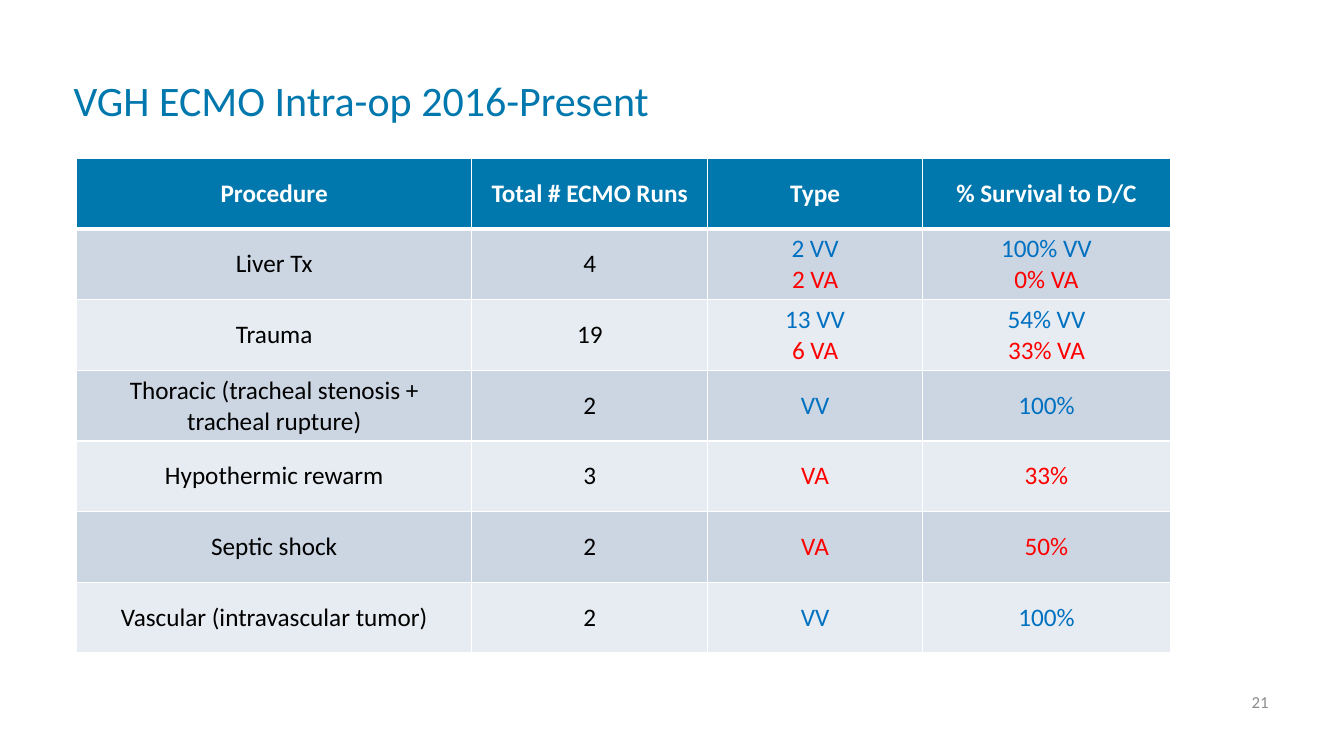
import lxml.etree
import pptx
import pptx.dml.color
import pptx.enum.text
import pptx.oxml.ns
import pptx.util

Inches = pptx.util.Inches
PP_ALIGN = pptx.enum.text.PP_ALIGN
MIDDLE = pptx.enum.text.MSO_ANCHOR.MIDDLE
WHITE = "FFFFFF"
BLACK = "000000"
TEAL = "0078AE"
BANDS = ["CCD6E3", "E7ECF2"]
MODE_COLORS = {"VV": "0070C0", "VA": "FF0000"}


def color(hex_code):
    return pptx.dml.color.RGBColor.from_string(hex_code)


def write(paragraph, text, size, hex_code, align, bold=False):
    paragraph.alignment = align
    run = paragraph.add_run()
    run.text = text
    run.font.name = "Calibri"
    run.font.size = pptx.util.Pt(size)
    run.font.bold = bold
    run.font.color.rgb = color(hex_code)


presentation = pptx.Presentation()
presentation.slide_width = Inches(13.33)
presentation.slide_height = Inches(7.5)
slide = presentation.slides.add_slide(presentation.slide_layouts[5])

heading = slide.shapes.title
heading.left, heading.top = Inches(0.63), Inches(0.73)
heading.width, heading.height = Inches(8.31), Inches(0.59)
heading.text_frame.vertical_anchor = MIDDLE
heading_line = heading.text_frame.paragraphs[0]
heading_line.line_spacing = 0.9
write(heading_line, "VGH ECMO Intra-op 2016-Present", 30, TEAL, PP_ALIGN.LEFT)

page_number = slide.shapes.add_textbox(Inches(9.68), Inches(6.76), Inches(3), Inches(0.4))
page_number.text_frame.word_wrap = True
page_number.text_frame.vertical_anchor = MIDDLE
write(page_number.text_frame.paragraphs[0], "21", 12, "8C8C8C", PP_ALIGN.RIGHT)

headers = ["Procedure", "Total # ECMO Runs", "Type", "% Survival to D/C"]
procedures = [
    ("Liver Tx", "4", [("VV", "2 VV", "100% VV"), ("VA", "2 VA", "0% VA")]),
    ("Trauma", "19", [("VV", "13 VV", "54% VV"), ("VA", "6 VA", "33% VA")]),
    ("Thoracic (tracheal stenosis + tracheal rupture)", "2", [("VV", "VV", "100%")]),
    ("Hypothermic rewarm", "3", [("VA", "VA", "33%")]),
    ("Septic shock", "2", [("VA", "VA", "50%")]),
    ("Vascular (intravascular tumor)", "2", [("VV", "VV", "100%")]),
]

rows = [[[(header, WHITE)] for header in headers]]
for procedure, total_runs, outcomes in procedures:
    types = [(kind, MODE_COLORS[mode]) for mode, kind, survival in outcomes]
    survivals = [(survival, MODE_COLORS[mode]) for mode, kind, survival in outcomes]
    rows.append([[(procedure, BLACK)], [(total_runs, BLACK)], types, survivals])

survival_table = slide.shapes.add_table(
    len(rows), len(headers), Inches(0.76), Inches(1.57), Inches(10.85), Inches(4.91)
).table
for column, width in zip(survival_table.columns, [3.92, 2.34, 2.13, 2.46]):
    column.width = Inches(width)
for row in survival_table.rows:
    row.height = Inches(4.91 / len(rows))

for row_index, row_cells in enumerate(rows):
    is_header = row_index == 0
    for column_index, lines in enumerate(row_cells):
        cell = survival_table.cell(row_index, column_index)
        cell.vertical_anchor = MIDDLE
        for line_index, (text, hex_code) in enumerate(lines):
            frame = cell.text_frame
            paragraph = frame.add_paragraph() if line_index else frame.paragraphs[0]
            write(paragraph, text, 18, hex_code, PP_ALIGN.CENTER, is_header)

        properties = cell._tc.get_or_add_tcPr()
        for side in ["L", "R", "T", "B"]:
            under_header = (row_index, side) in [(0, "B"), (1, "T")]
            border = lxml.etree.SubElement(
                properties, pptx.oxml.ns.qn("a:ln" + side),
                w=str(pptx.util.Pt(3 if under_header else 1)),
            )
            border_fill = lxml.etree.SubElement(border, pptx.oxml.ns.qn("a:solidFill"))
            lxml.etree.SubElement(border_fill, pptx.oxml.ns.qn("a:srgbClr"), val=WHITE)
        cell.fill.solid()
        cell.fill.fore_color.rgb = color(TEAL if is_header else BANDS[(row_index - 1) % 2])

presentation.save("out.pptx")
